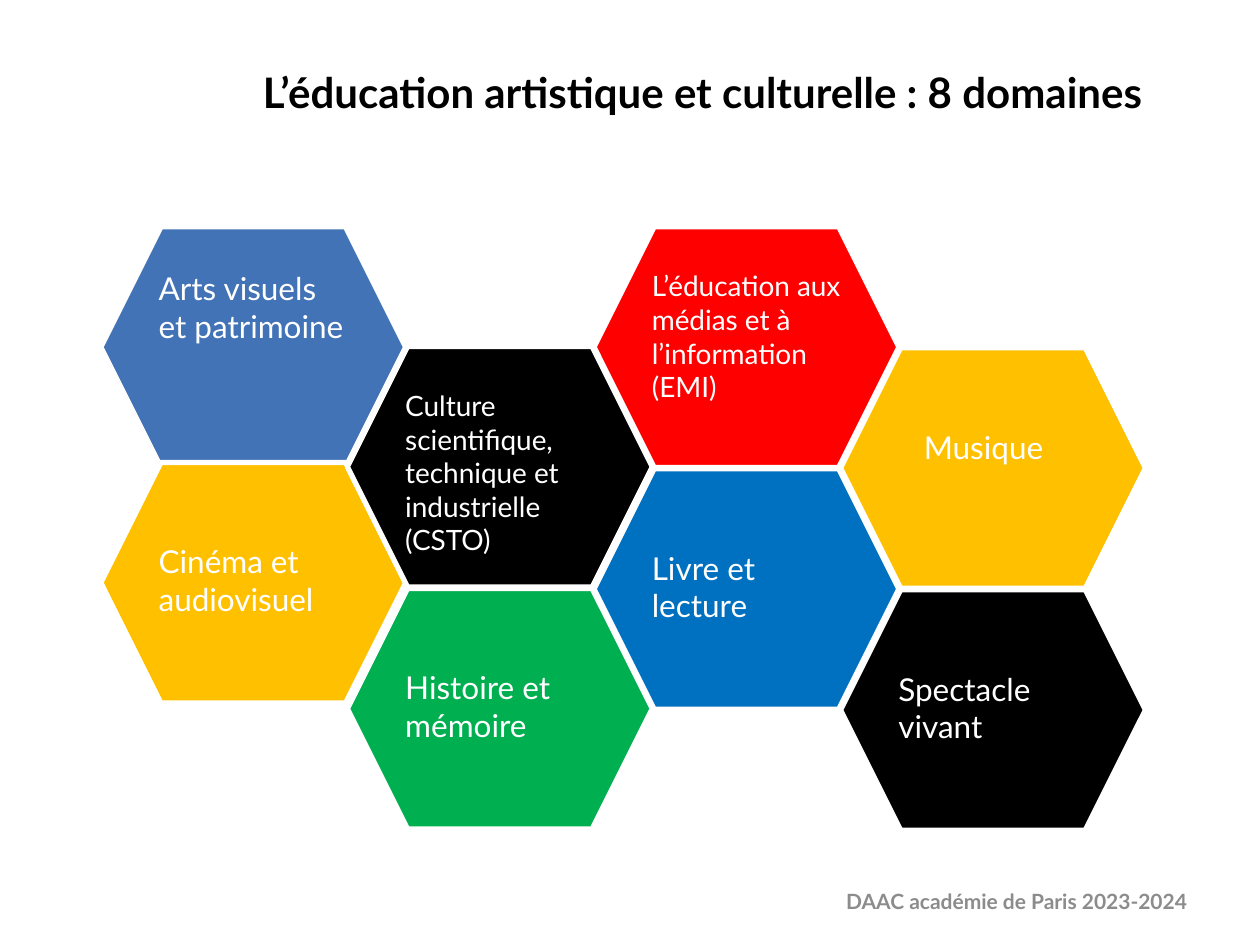
import pptx
import pptx.util
from pptx.dml.color import RGBColor
from pptx.enum.shapes import MSO_SHAPE
from pptx.enum.text import MSO_ANCHOR, PP_ALIGN

Inches = pptx.util.Inches
Pt = pptx.util.Pt

TITLE = "L’éducation artistique et culturelle : 8 domaines"
FOOTER = "DAAC académie de Paris 2023-2024"
COLORS = {
    "white": "FFFFFF", "black": "000000", "steel": "4273B7", "gold": "FFC000",
    "green": "00B050", "red": "FF0000", "blue": "0070C0", "gray": "8C8C8C",
}
HIGH, LOW = 0.05, 0.35
COLUMNS = [
    (1.8, 1.87, [
        ("Arts visuels et patrimoine", "steel", 18, HIGH, 0.1),
        ("Cinéma et audiovisuel", "gold", 18, LOW, 0.1),
    ]),
    (2.75, 1.92, [
        ("Culture scientifique, technique et industrielle (CSTO)", "black", 16, HIGH, 0.1),
        ("Histoire et mémoire", "green", 18, LOW, 0.1),
    ]),
    (1.8, 1.92, [
        ("L’éducation aux médias et à l’information (EMI)", "red", 16, HIGH, 0.1),
        ("Livre et lecture", "blue", 18, LOW, 0.1),
    ]),
    (2.76, 1.92, [
        ("Musique", "gold", 18, LOW, 0.3),
        ("Spectacle vivant", "black", 18, LOW, 0.1),
    ]),
]
LEFT, STEP, WIDTH, HEIGHT = 0.8, 1.957, 2.42, 1.91


def paint(name):
    return RGBColor.from_string(COLORS[name])


def write(shape, text, size=18, color="white", bold=False, align=PP_ALIGN.LEFT,
          anchor=MSO_ANCHOR.TOP, top=0.05, left=0.1, spacing=1.0):
    frame = shape.text_frame
    frame.word_wrap = True
    frame.vertical_anchor = anchor
    frame.margin_top = Inches(top)
    frame.margin_left = Inches(left)
    frame.text = text
    para = frame.paragraphs[0]
    para.alignment = align
    para.line_spacing = spacing
    font = para.runs[0].font
    font.name = "Lato"
    font.size = Pt(size)
    font.bold = bold
    font.color.rgb = paint(color)


def main():
    deck = pptx.Presentation()
    deck.slide_width, deck.slide_height = Inches(10), Inches(7.5)
    slide = deck.slides.add_slide(deck.slide_layouts[5])

    title = slide.shapes.title
    title.left, title.top = Inches(1.84), Inches(0.27)
    title.width, title.height = Inches(7.47), Inches(0.96)
    write(title, TITLE, size=24, color="black", bold=True, align=PP_ALIGN.CENTER,
          anchor=MSO_ANCHOR.MIDDLE, spacing=0.9)

    for col, (start, drop, cells) in enumerate(COLUMNS):
        for row, (text, fill, size, top, left) in enumerate(cells):
            tile = slide.shapes.add_shape(
                MSO_SHAPE.HEXAGON, Inches(LEFT + col * STEP),
                Inches(start + row * drop), Inches(WIDTH), Inches(HEIGHT))
            tile.shadow.inherit = False
            tile.fill.solid()
            tile.fill.fore_color.rgb = paint(fill)
            tile.line.color.rgb = paint("white")
            tile.line.width = Pt(3)
            write(tile, text, size=size, top=top, left=left)

    footer = slide.shapes.add_textbox(Inches(6.38), Inches(6.95), Inches(3.38), Inches(0.4))
    write(footer, FOOTER, size=12, color="gray", bold=True, align=PP_ALIGN.CENTER,
          anchor=MSO_ANCHOR.MIDDLE)
    deck.save("out.pptx")


if __name__ == "__main__":
    main()
